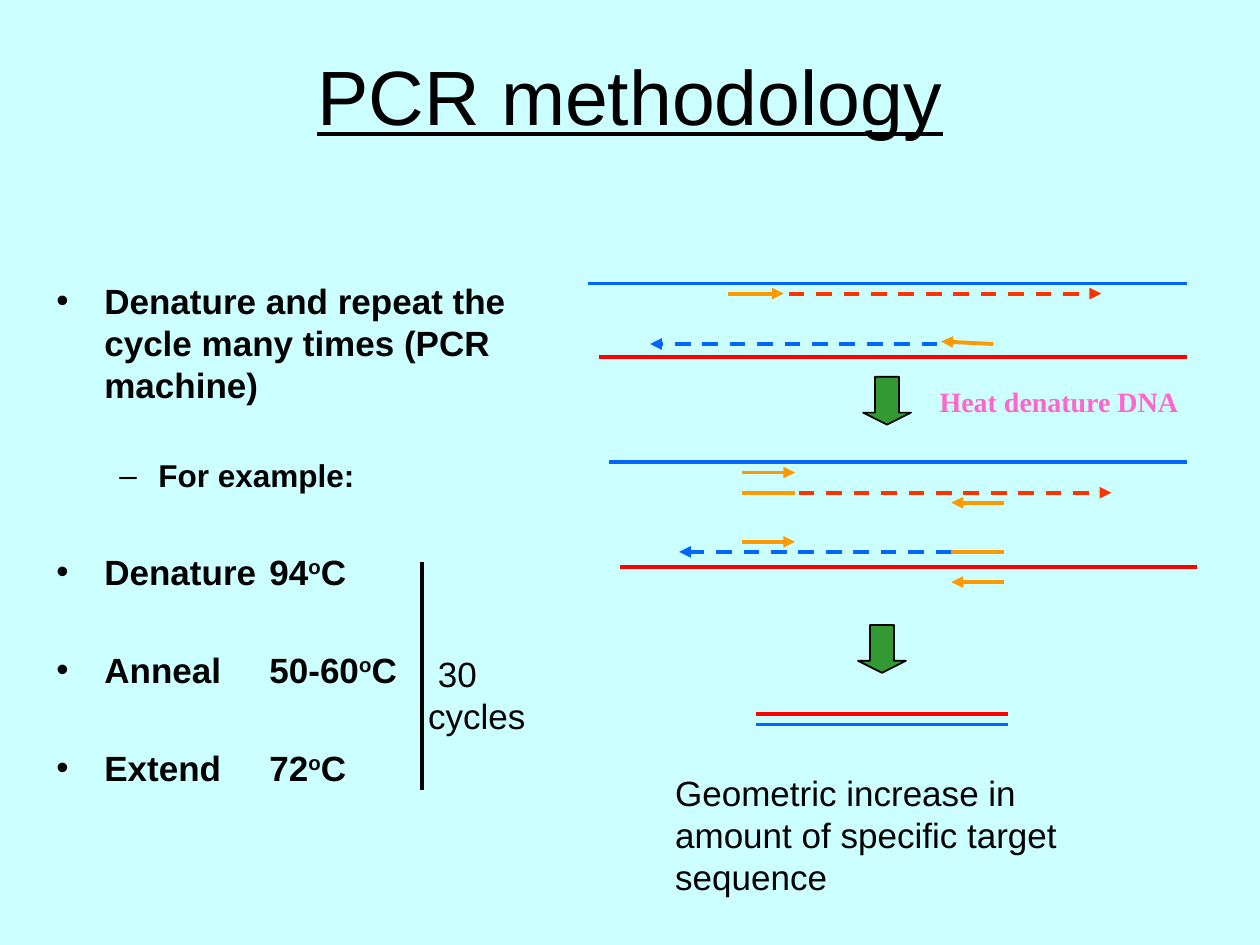
from pptx import Presentation
from pptx.util import Inches, Pt
from pptx.dml.color import RGBColor
from pptx.enum.dml import MSO_LINE
from pptx.enum.shapes import MSO_CONNECTOR as Link, MSO_SHAPE as Shape
from pptx.enum.text import MSO_ANCHOR as Anchor, PP_ALIGN as Align
from pptx.oxml.ns import qn
from lxml.etree import SubElement as Sub

BLACK = RGBColor(0x00, 0x00, 0x00)
SKY = RGBColor(0xCC, 0xFF, 0xFF)
BLUE = RGBColor(0x00, 0x66, 0xFF)
RED = RGBColor(0xFF, 0x00, 0x00)
CORAL = RGBColor(0xFF, 0x33, 0x00)
GOLD = RGBColor(0xFF, 0x99, 0x00)
GREEN = RGBColor(0x33, 0x99, 0x33)
PINK = RGBColor(0xFF, 0x66, 0xCC)


def style(run, size, color=BLACK, face="Arial", bold=False):
    font = run.font
    font.name, font.size, font.bold = face, Pt(size), bold
    font.color.rgb = color


def add_title(slide, text):
    title = slide.shapes.title
    title.left, title.top = Inches(0.75), Inches(0.13)
    title.width, title.height = Inches(8.5), Inches(1.25)
    frame = title.text_frame
    frame.text = text
    frame.vertical_anchor = Anchor.MIDDLE
    para = frame.paragraphs[0]
    para.alignment = Align.CENTER
    style(para.runs[0], 44)
    para.runs[0].font.underline = True


def add_box(slide, left, top, width, height, wrap=True):
    box = slide.shapes.add_textbox(
        Inches(left), Inches(top), Inches(width), Inches(height))
    box.text_frame.word_wrap = wrap
    return box.text_frame


def add_note(slide, text, spot, size, wrap=True, **look):
    frame = add_box(slide, *spot, wrap=wrap)
    frame.text = text
    style(frame.paragraphs[0].runs[0], size, **look)


def set_bullet(para, mark, left, hang, tab=None):
    props = para._p.get_or_add_pPr()
    props.set("marL", str(Inches(left)))
    props.set("indent", str(-Inches(hang)))
    Sub(props, qn("a:buFont")).set("typeface", "Arial")
    Sub(props, qn("a:buChar")).set("char", mark)
    if tab:
        stop = Sub(Sub(props, qn("a:tabLst")), qn("a:tab"))
        stop.set("pos", str(Inches(tab)))
        stop.set("algn", "l")


def add_item(para, text, gap, size=20, mark="•", left=0.38, hang=0.38):
    para.text = text
    para.space_before = Pt(gap)
    set_bullet(para, mark, left, hang)
    style(para.runs[0], size, bold=True)


def add_step(para, name, heat):
    para.space_before = Pt(32)
    set_bullet(para, "•", 0.38, 0.38, tab=1.69)
    for text in (f"{name}\t{heat}", "o", "C"):
        run = para.add_run()
        run.text = text
        style(run, 20, bold=True)
    para.runs[1].font._element.set("baseline", "30000")


def add_list(slide):
    frame = add_box(slide, 0.35, 2.17, 4.17, 4.5)
    add_item(frame.paragraphs[0],
             "Denature and repeat the cycle many times (PCR machine)", 4)
    add_item(frame.add_paragraph(), "For example:", 29,
             size=18, mark="–", left=0.81, hang=0.31)
    steps = [("Denature", "94"), ("Anneal", "50-60"), ("Extend", "72")]
    for name, heat in steps:
        add_step(frame.add_paragraph(), name, heat)


def add_line(slide, color, x1, y1, x2, y2, tip=False, dash=False):
    link = slide.shapes.add_connector(
        Link.STRAIGHT, Inches(x1), Inches(y1), Inches(x2), Inches(y2))
    link.line.color.rgb = color
    link.line.width = Pt(2.25)
    if dash:
        link.line.dash_style = MSO_LINE.DASH
    if tip:
        Sub(link.line._get_or_add_ln(), qn("a:tailEnd")).set("type", "triangle")
    Sub(link._element.spPr, qn("a:effectLst"))


def add_arrow(slide, left, top):
    arrow = slide.shapes.add_shape(
        Shape.DOWN_ARROW, Inches(left), Inches(top), Inches(0.38), Inches(0.38))
    arrow.adjustments[0], arrow.adjustments[1] = 0.5, 0.25
    arrow.shadow.inherit = False
    arrow.fill.solid()
    arrow.fill.fore_color.rgb = GREEN
    arrow.line.color.rgb = BLACK
    arrow.line.width = Pt(1)


def main():
    deck = Presentation()
    deck.slide_width, deck.slide_height = Inches(10), Inches(7.5)
    slide = deck.slides.add_slide(deck.slide_layouts[5])
    slide.background.fill.solid()
    slide.background.fill.fore_color.rgb = SKY

    add_title(slide, "PCR methodology")
    add_list(slide)

    # Bar that groups the three steps
    add_line(slide, BLACK, 3.35, 4.46, 3.35, 6.27)
    add_note(slide, " 30 cycles", (3.3, 5.13, 1.43, 0.76), 20)

    # Template strands and the final product
    for color, x1, x2, y in [
            (BLUE, 4.67, 9.42, 2.25), (RED, 4.75, 9.42, 2.83),
            (BLUE, 4.83, 9.42, 3.67), (RED, 4.92, 9.5, 4.5),
            (RED, 6, 8, 5.67), (BLUE, 6, 8, 5.75)]:
        add_line(slide, color, x1, y, x2, y)

    # New strands, drawn in the direction of growth
    for color, x1, x2, y in [
            (CORAL, 6.26, 8.74, 2.33), (BLUE, 7.44, 5.16, 2.73),
            (CORAL, 6.34, 8.82, 3.91), (BLUE, 7.55, 5.39, 4.38)]:
        add_line(slide, color, x1, y, x2, y, tip=True, dash=True)

    # Primers of the first cycle
    add_line(slide, GOLD, 5.78, 2.33, 6.22, 2.33, tip=True)
    add_line(slide, GOLD, 7.88, 2.73, 7.47, 2.71, tip=True)

    # Primers of the second cycle: free ones have a tip, built-in ones none
    ahead, back = (5.89, 6.31), (7.97, 7.55)
    for (x1, x2), y, tip in [
            (ahead, 3.75, True), (ahead, 3.91, False), (back, 3.99, True),
            (ahead, 4.3, True), (back, 4.38, False), (back, 4.62, True)]:
        add_line(slide, GOLD, x1, y, x2, y, tip=tip)

    # Stage arrows and captions
    add_arrow(slide, 6.85, 2.99)
    add_arrow(slide, 6.81, 4.96)
    add_note(slide, "Heat denature DNA", (7.36, 3, 2.1, 0.36), 16, wrap=False,
             color=PINK, face="Times New Roman", bold=True)
    add_note(slide, "Geometric increase in amount of specific target sequence",
             (5.26, 6.07, 3.6, 1.1), 20)

    deck.save("out.pptx")


if __name__ == "__main__":
    main()
